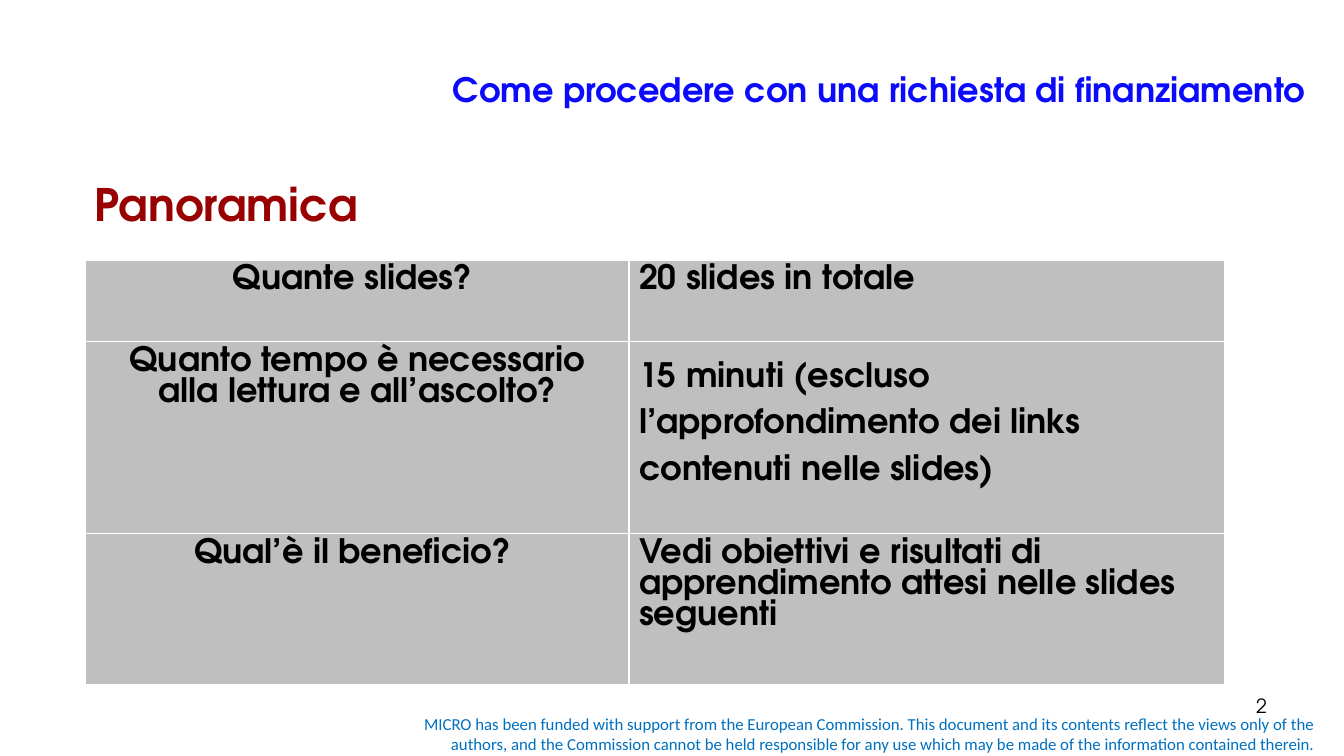
from pptx import Presentation
from pptx.dml.color import RGBColor
from pptx.enum.text import MSO_ANCHOR, PP_ALIGN
from pptx.util import Cm, Pt

FONT = "TeX Gyre Adventor"


def style(p, size, color, bold=False, align=PP_ALIGN.LEFT, font=FONT):
    p.alignment = align
    p.font.name = font
    p.font.size = Pt(size)
    p.font.bold = bold
    p.font.color.rgb = RGBColor.from_string(color)


def add_text(text, left, top, width, height, anchor, *look):
    tf = slide.shapes.add_textbox(Cm(left), Cm(top), Cm(width), Cm(height)).text_frame
    tf.word_wrap = True
    tf.vertical_anchor = anchor
    p = tf.paragraphs[0]
    p.text = text
    style(p, *look)
    return tf


prs = Presentation()
prs.slide_width, prs.slide_height = Cm(33.87), Cm(19.05)
slide = prs.slides.add_slide(prs.slide_layouts[6])

add_text(
    "MICRO has been funded with support from the European Commission. "
    "This document and its contents reflect the views only of the authors, "
    "and the Commission cannot be held responsible for any use which may be "
    "made of the information contained therein.",
    9.53, 17.86, 23.87, 1.28, MSO_ANCHOR.MIDDLE,
    12, "0070C0", False, PP_ALIGN.RIGHT, "Calibri")

rows = [
    ("Quante slides? ", "20 slides in totale"),
    ("Quanto tempo è necessario alla lettura e all’ascolto?",
     "15 minuti (escluso l’approfondimento dei links contenuti nelle slides)"),
    ("Qual’è il beneficio? ",
     "Vedi obiettivi e risultati di apprendimento attesi nelle slides seguenti"),
]
widths = [13.69, 15.02]
heights = [2.06, 4.83, 3.81]
table = slide.shapes.add_table(
    len(rows), len(widths), Cm(2.16), Cm(6.55), Cm(sum(widths)), Cm(sum(heights))).table
table.first_row = table.horz_banding = False
for column, width in zip(table.columns, widths):
    column.width = Cm(width)
for i, (texts, height) in enumerate(zip(rows, heights)):
    table.rows[i].height = Cm(height)
    for j, (text, align) in enumerate(zip(texts, (PP_ALIGN.CENTER, PP_ALIGN.LEFT))):
        cell = table.cell(i, j)
        cell.fill.solid()
        cell.fill.fore_color.rgb = RGBColor.from_string("BFBFBF")
        cell.text = text
        style(cell.text_frame.paragraphs[0], 24, "000000", True, align)
table.cell(1, 1).text_frame.paragraphs[0].line_spacing = 1.5

add_text("2", 24.28, 17.35, 7.9, 1.32, MSO_ANCHOR.TOP,
         14, "000000", False, PP_ALIGN.RIGHT)
add_text("Panoramica", 2.13, 4.34, 7.37, 1.63, MSO_ANCHOR.TOP,
         32, "990000", True)
title = add_text("Come procedere con una richiesta di finanziamento ",
                 2.9, 0, 30.48, 3.18, MSO_ANCHOR.BOTTOM,
                 24, "0B0AFD", True, PP_ALIGN.RIGHT)
title.margin_bottom = Cm(0.43)

prs.save("out.pptx")
